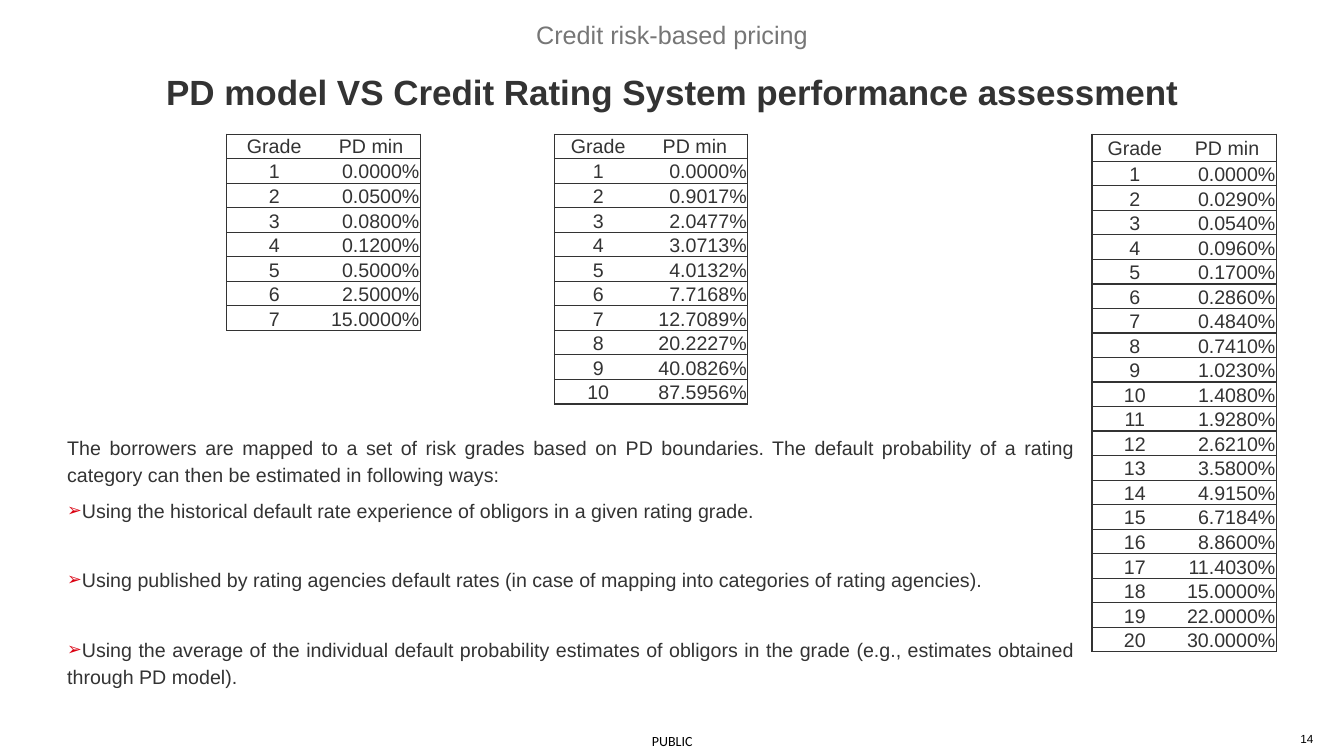
import dataclasses

import lxml.etree
import pptx
import pptx.dml.color
import pptx.enum.text
import pptx.oxml.ns
import pptx.util

Pt = pptx.util.Pt
Align = pptx.enum.text.PP_ALIGN
Anchor = pptx.enum.text.MSO_ANCHOR
qn = pptx.oxml.ns.qn

INK = pptx.dml.color.RGBColor(0x33, 0x33, 0x33)
GREY = pptx.dml.color.RGBColor(0x76, 0x76, 0x76)
RED = pptx.dml.color.RGBColor(0xDB, 0x00, 0x11)
BLACK = pptx.dml.color.RGBColor(0, 0, 0)
WHITE = pptx.dml.color.RGBColor(0xFF, 0xFF, 0xFF)

TABLE_TOP = 95.8
ROW_HEIGHT = 14.4
CELL_INSET = 0.7
BODY_SIZE = 14


@dataclasses.dataclass(frozen=True)
class RatingScale:
    left: float
    widths: tuple[float, float]
    header_height: float
    boundaries: str


@dataclasses.dataclass(frozen=True)
class Statement:
    text: str
    space_before: float
    bulleted: bool = True


@dataclasses.dataclass(frozen=True)
class FooterLabel:
    text: str
    left: float
    top: float
    width: float
    height: float
    font: str
    size: float
    alignment: Align


SCALES = (
    RatingScale(162, (67.8, 70.6), ROW_HEIGHT,
                "0.0000 0.0500 0.0800 0.1200 0.5000 2.5000 15.0000"),
    RatingScale(396, (62.6, 75.6), ROW_HEIGHT,
                "0.0000 0.9017 2.0477 3.0713 4.0132 7.7168 12.7089 20.2227 "
                "40.0826 87.5956"),
    RatingScale(780, (61.2, 70.6), 19.4,
                "0.0000 0.0290 0.0540 0.0960 0.1700 0.2860 0.4840 0.7410 "
                "1.0230 1.4080 1.9280 2.6210 3.5800 4.9150 6.7184 8.8600 "
                "11.4030 15.0000 22.0000 30.0000"),
)

STATEMENTS = (
    Statement("The borrowers are mapped to a set of risk grades based on PD "
              "boundaries. The default probability of a rating category can "
              "then be estimated in following ways:", 0, False),
    Statement("Using the historical default rate experience of obligors in a "
              "given rating grade.", 5.6),
    Statement("Using published by rating agencies default rates (in case of "
              "mapping into categories of rating agencies).", 30),
    Statement("Using the average of the individual default probability "
              "estimates of obligors in the grade (e.g., estimates obtained "
              "through PD model).", 30),
)

FOOTER = (
    FooterLabel("PUBLIC", 455, 519.1, 50.4, 20.9, "Calibri", 10, Align.CENTER),
    FooterLabel("14", 910.8, 522.7, 27.4, 10.1, "Arial", 8.4, Align.RIGHT),
)


def style_font(font, size: float, color, name: str = "Arial") -> None:
    font.name = name
    font.size = Pt(size)
    font.color.rgb = color


def add_text_frame(page, left: float, top: float, width: float, height: float):
    frame = page.shapes.add_textbox(
        Pt(left), Pt(top), Pt(width), Pt(height)).text_frame
    frame.word_wrap = True
    frame.margin_left = frame.margin_right = 0
    frame.margin_top = frame.margin_bottom = 0
    return frame


def add_title(page) -> None:
    title = page.shapes.title
    title.left, title.top, title.width, title.height = (
        Pt(48), Pt(0), Pt(864), Pt(84))
    frame = title.text_frame
    frame.auto_size = pptx.enum.text.MSO_AUTO_SIZE.NONE
    frame.vertical_anchor = Anchor.BOTTOM
    para = frame.paragraphs[0]
    para.alignment = Align.CENTER
    para.line_spacing = 1.5
    para.space_before = Pt(0)
    topic = para.add_run()
    topic.text = "Credit risk-based pricing"
    style_font(topic.font, 18, GREY)
    para.add_line_break()
    heading = para.add_run()
    heading.text = "PD model VS Credit Rating System performance assessment"
    style_font(heading.font, 25, INK)
    heading.font.bold = True


def add_bullet(para) -> None:
    properties = para._p.get_or_add_pPr()
    color = lxml.etree.SubElement(properties, qn("a:buClr"))
    lxml.etree.SubElement(color, qn("a:srgbClr"), val=str(RED))
    lxml.etree.SubElement(properties, qn("a:buSzPct"), val="90000")
    lxml.etree.SubElement(properties, qn("a:buFont"), typeface="Arial")
    lxml.etree.SubElement(properties, qn("a:buChar"), char="➢")


def add_statements(page) -> None:
    frame = add_text_frame(page, 48, 308.4, 720, 192)
    for index, statement in enumerate(STATEMENTS):
        para = frame.add_paragraph() if index else frame.paragraphs[0]
        para.text = statement.text
        para.alignment = Align.JUSTIFY
        para.line_spacing = 1.17
        para.space_before = Pt(statement.space_before)
        if statement.bulleted:
            add_bullet(para)
        style_font(para.font, BODY_SIZE, INK)


def set_borders(cell, open_side: str) -> None:
    properties = cell._tc.get_or_add_tcPr()
    for side in ("lnL", "lnR", "lnT", "lnB"):
        line = lxml.etree.SubElement(
            properties, qn(f"a:{side}"), w=str(Pt(1)))
        if side == open_side:
            lxml.etree.SubElement(line, qn("a:noFill"))
        else:
            fill = lxml.etree.SubElement(line, qn("a:solidFill"))
            lxml.etree.SubElement(fill, qn("a:srgbClr"), val=str(INK))


def fill_cell(cell, text: str, alignment: Align, anchor: Anchor,
              open_side: str) -> None:
    set_borders(cell, open_side)
    cell.fill.solid()
    cell.fill.fore_color.rgb = WHITE
    cell.margin_left = cell.margin_right = cell.margin_top = Pt(CELL_INSET)
    cell.margin_bottom = 0
    cell.vertical_anchor = anchor
    para = cell.text_frame.paragraphs[0]
    para.text = text
    para.alignment = alignment
    style_font(para.font, BODY_SIZE, INK)


def add_scale(page, scale: RatingScale) -> None:
    rows = [("Grade", "PD min")] + [
        (str(grade), f"{boundary}%")
        for grade, boundary in enumerate(scale.boundaries.split(), 1)]
    height = scale.header_height + ROW_HEIGHT * (len(rows) - 1)
    table = page.shapes.add_table(
        len(rows), 2, Pt(scale.left), Pt(TABLE_TOP),
        Pt(sum(scale.widths)), Pt(height)).table
    table.first_row = table.horz_banding = False
    for column, width in zip(table.columns, scale.widths):
        column.width = Pt(width)
    for index, (grade, boundary) in enumerate(rows):
        table.rows[index].height = Pt(ROW_HEIGHT if index else scale.header_height)
        anchor = Anchor.BOTTOM if index else Anchor.MIDDLE
        fill_cell(table.cell(index, 0), grade, Align.CENTER, anchor, "lnR")
        fill_cell(table.cell(index, 1), boundary,
                  Align.RIGHT if index else Align.CENTER, anchor, "lnL")


def add_footer_label(page, label: FooterLabel) -> None:
    frame = add_text_frame(page, label.left, label.top, label.width, label.height)
    frame.vertical_anchor = Anchor.MIDDLE
    para = frame.paragraphs[0]
    para.text = label.text
    para.alignment = label.alignment
    style_font(para.font, label.size, BLACK, label.font)


def main() -> None:
    deck = pptx.Presentation()
    deck.slide_width, deck.slide_height = Pt(960), Pt(540)
    page = deck.slides.add_slide(deck.slide_layouts.get_by_name("Title Only"))
    add_title(page)
    add_statements(page)
    for scale in SCALES:
        add_scale(page, scale)
    for label in FOOTER:
        add_footer_label(page, label)
    deck.save("out.pptx")


if __name__ == "__main__":
    main()
